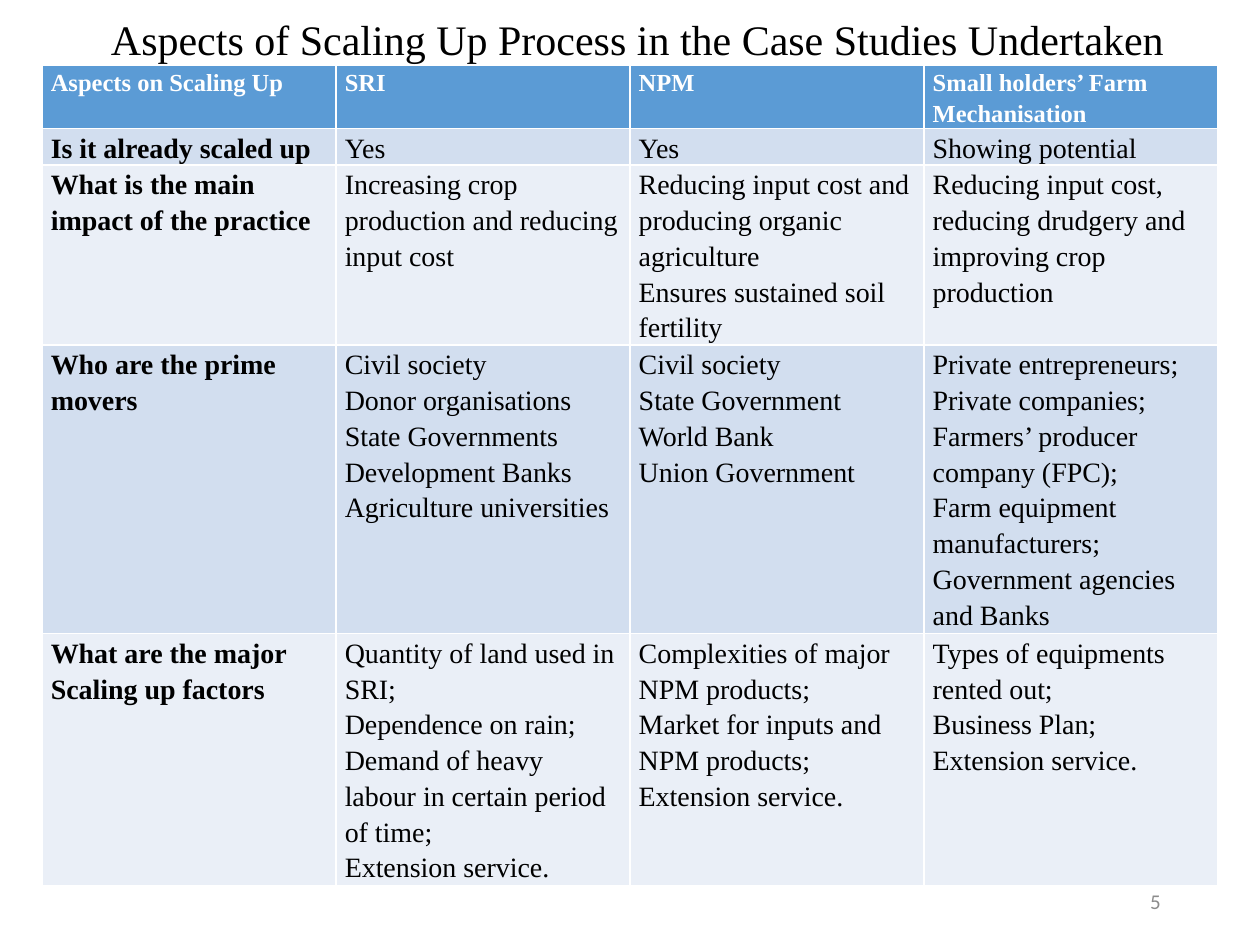
from dataclasses import dataclass

from pptx import Presentation
from pptx import util as u
from pptx.dml.color import RGBColor
from pptx.enum import text


@dataclass(frozen=True)
class Theme:
    serif: str = "Times New Roman"
    sans: str = "Calibri"
    ink: str = "000000"
    white: str = "FFFFFF"
    grey: str = "8C8C8C"
    head: str = "5B9BD5"
    bands: tuple = ("D2DEEF", "EAEFF7")
    title: int = 24
    label: int = 14
    body: int = 16
    note: int = 12


@dataclass(frozen=True)
class Box:
    left: float
    top: float
    width: float
    height: float

    def place(self):
        return [u.Inches(n) for n in (self.left, self.top, self.width, self.height)]


THEME = Theme()
WIDE, HIGH = 10, 7.5
ROWS = (0.5, 0.29, 1.43, 2.29, 2)  # row heights in inches

# Each cell is a list of lines, one paragraph per line
CELLS = [
    ["Aspects on Scaling Up", "SRI", "NPM", "Small holders’ Farm Mechanisation"],
    ["Is it already scaled up", "Yes", "Yes", "Showing potential"],
    ["What is the main impact of the practice",
     "Increasing crop production and reducing input cost",
     "Reducing input cost and producing organic agriculture\n"
     "Ensures sustained soil fertility",
     "Reducing input cost, reducing drudgery and improving crop production"],
    ["Who are the prime movers",
     "Civil society\nDonor organisations\nState Governments\n"
     "Development Banks\nAgriculture universities",
     "Civil society\nState Government\nWorld Bank\nUnion Government",
     "Private entrepreneurs;\nPrivate companies;\n"
     "Farmers’ producer company (FPC);\nFarm equipment manufacturers;\n"
     "Government agencies and Banks"],
    ["What are the major Scaling up factors",
     "Quantity of land used in SRI;\nDependence on rain;\n"
     "Demand of heavy labour in certain period of time;\nExtension service.",
     "Complexities of major NPM products;\n"
     "Market for inputs and NPM products;\nExtension service.",
     "Types of equipments rented out;\nBusiness Plan;\nExtension service."],
]


def style(frame, face, size, color, bold=False, align=None, gap=None):
    """Format every paragraph and run of a text frame."""
    for para in frame.paragraphs:
        para.alignment = align
        para.line_spacing = gap
        for run in para.runs:
            font = run.font
            font.name, font.size, font.bold = face, u.Pt(size), bold
            font.color.rgb = RGBColor.from_string(color)


def add_title(slide, box, words):
    shape = slide.shapes.title
    shape.left, shape.top, shape.width, shape.height = box.place()
    frame = shape.text_frame
    frame.text = words
    frame.word_wrap = True
    frame.auto_size = text.MSO_AUTO_SIZE.NONE
    frame.vertical_anchor = text.MSO_ANCHOR.MIDDLE
    style(frame, THEME.serif, THEME.title, THEME.ink,
          align=text.PP_ALIGN.CENTER, gap=0.9)


def fill_cell(cell, words, row, col):
    head = row == 0
    cell.margin_left = cell.margin_right = u.Inches(0.07)
    cell.margin_top = cell.margin_bottom = 0
    cell.fill.solid()
    shade = THEME.head if head else THEME.bands[(row - 1) % 2]
    cell.fill.fore_color.rgb = RGBColor.from_string(shade)
    cell.text_frame.text = words
    style(cell.text_frame, THEME.serif,
          THEME.label if head else THEME.body,
          THEME.white if head else THEME.ink,
          bold=head or col == 0, gap=1.15)


def add_grid(slide, box, cells, rows):
    count = len(cells[0])
    grid = slide.shapes.add_table(len(cells), count, *box.place()).table
    for col in grid.columns:
        col.width = u.Inches(box.width / count)
    for row, line in enumerate(cells):
        grid.rows[row].height = u.Inches(rows[row])
        for col, words in enumerate(line):
            fill_cell(grid.cell(row, col), words, row, col)


def add_number(slide, box, words):
    frame = slide.shapes.add_textbox(*box.place()).text_frame
    frame.text = words
    frame.word_wrap = True
    frame.vertical_anchor = text.MSO_ANCHOR.MIDDLE
    style(frame, THEME.sans, THEME.note, THEME.grey, align=text.PP_ALIGN.RIGHT)


def main():
    deck = Presentation()
    deck.slide_width, deck.slide_height = u.Inches(WIDE), u.Inches(HIGH)
    slide = deck.slides.add_slide(deck.slide_layouts[5])
    side = WIDE / 30
    add_title(slide, Box(0.75, 0, 8.62, 0.67),
              "Aspects of Scaling Up Process in the Case Studies Undertaken")
    add_grid(slide, Box(side, 0.52, WIDE - 2 * side, sum(ROWS)), CELLS, ROWS)
    add_number(slide, Box(7.06, 6.95, 2.25, 0.4), "5")
    deck.save("out.pptx")


if __name__ == "__main__":
    main()
